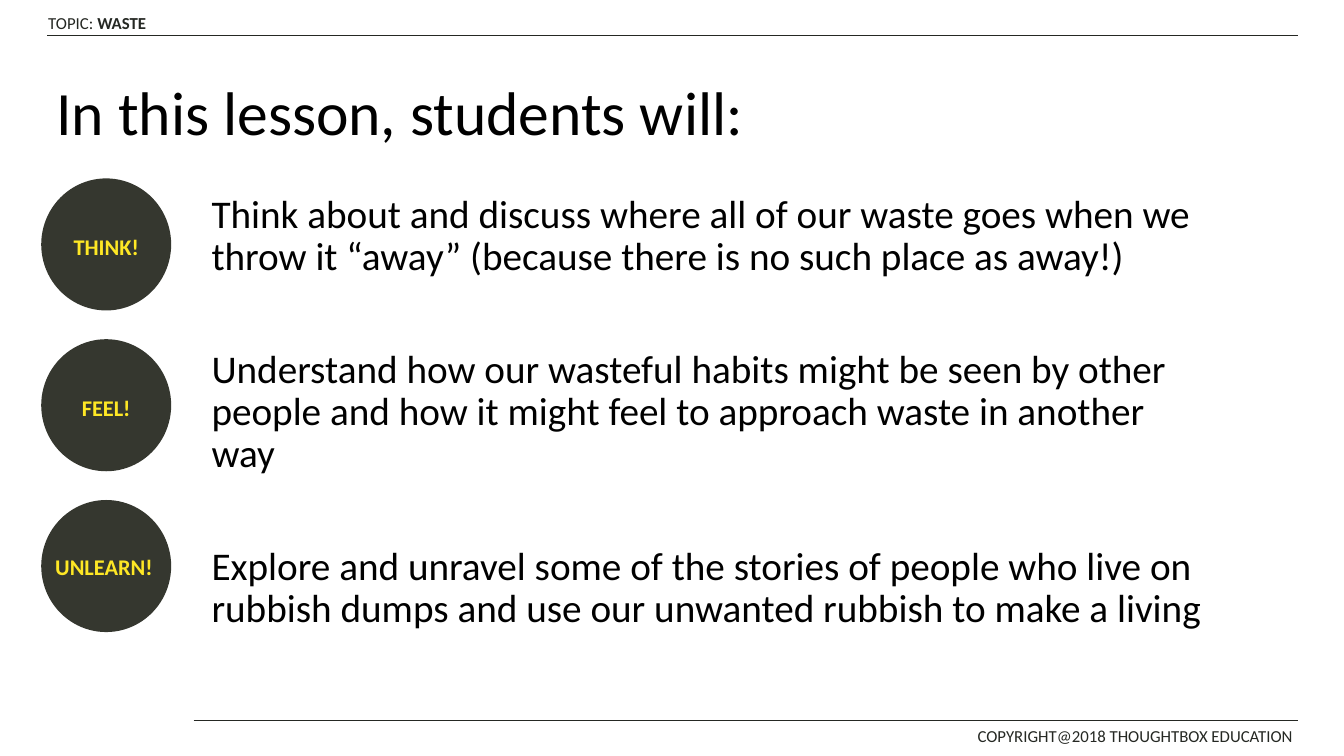
from dataclasses import dataclass, field

import pptx
import pptx.dml.color
import pptx.enum.shapes
import pptx.enum.text
import pptx.oxml.ns
import pptx.util
from lxml import etree

INK, BLACK, DISC, YELLOW = "252823", "000000", "35372F", "FEE725"
ALIGN = pptx.enum.text.PP_ALIGN
ANCHOR = pptx.enum.text.MSO_ANCHOR
FIT = pptx.enum.text.MSO_AUTO_SIZE


@dataclass
class Area:
    """Left, top, width and height as percentages of the slide's size."""
    left: float
    top: float
    width: float
    height: float


@dataclass
class Style:
    size: float
    color: str
    bold: bool = False
    frame: dict = field(default_factory=dict)
    paragraph: dict = field(default_factory=dict)


@dataclass
class TextBlock:
    area: Area
    style: Style
    paragraphs: list[list[tuple[str, bool]]]
    gap: float = 0


deck = pptx.Presentation()
deck.slide_width = pptx.util.Inches(13.33)
deck.slide_height = pptx.util.Inches(7.5)
slide = deck.slides.add_slide(deck.slide_layouts[5])


def across(share: float) -> int:
    return round(deck.slide_width * share / 100)


def down(share: float) -> int:
    return round(deck.slide_height * share / 100)


def place(area: Area) -> tuple[int, int, int, int]:
    return across(area.left), down(area.top), across(area.width), down(area.height)


def rgb(color: str) -> pptx.dml.color.RGBColor:
    return pptx.dml.color.RGBColor.from_string(color)


def apply(target, values: dict) -> None:
    for name, value in values.items():
        setattr(target, name, value)


def write(frame, block: TextBlock) -> None:
    style = block.style
    apply(frame, {"word_wrap": True, "auto_size": FIT.NONE} | style.frame)
    for index, runs in enumerate(block.paragraphs):
        paragraph = frame.add_paragraph() if index else frame.paragraphs[0]
        apply(paragraph, {"alignment": ALIGN.LEFT} | style.paragraph)
        if index:
            paragraph.space_before = pptx.util.Pt(block.gap)
        for words, bold in runs:
            run = paragraph.add_run()
            run.text = words
            apply(run.font, {"name": "Calibri", "size": pptx.util.Pt(style.size),
                             "bold": bold or style.bold})
            run.font.color.rgb = rgb(style.color)


def add_text(block: TextBlock) -> None:
    write(slide.shapes.add_textbox(*place(block.area)).text_frame, block)


def add_rule(left: float, right: float, top: float) -> None:
    rule = slide.shapes.add_connector(pptx.enum.shapes.MSO_CONNECTOR.STRAIGHT,
                                      across(left), down(top), across(right), down(top))
    rule.line.color.rgb = rgb(INK)
    rule.line.width = pptx.util.Pt(1)
    etree.SubElement(rule.element.spPr, pptx.oxml.ns.qn("a:effectLst"))


def add_disc(area: Area, label: str) -> None:
    disc = slide.shapes.add_shape(pptx.enum.shapes.MSO_SHAPE.OVAL, *place(area))
    disc.shadow.inherit = False
    disc.fill.solid()
    disc.fill.fore_color.rgb = rgb(DISC)
    disc.line.fill.background()
    if label:
        write(disc.text_frame, TextBlock(area, DISC_LABEL, [[(label, False)]]))


GROW = {"auto_size": FIT.SHAPE_TO_FIT_TEXT}
TOPIC = Style(12, INK, frame=GROW | {"word_wrap": False})
COPYRIGHT = Style(12, INK, frame=GROW)
TITLE = Style(44, BLACK, frame={"vertical_anchor": ANCHOR.MIDDLE},
              paragraph={"line_spacing": 0.9})
DISC_LABEL = Style(16, YELLOW, True, {"vertical_anchor": ANCHOR.MIDDLE},
                   {"alignment": ALIGN.CENTER, "line_spacing": 1.15,
                    "space_after": pptx.util.Pt(10)})
WIDE_LABEL = Style(16, YELLOW, True, GROW)
AIMS = Style(28, BLACK, paragraph={"line_spacing": 0.9})

# Header and footer
add_text(TextBlock(Area(2.85, 1.07, 9.23, 4), TOPIC,
                   [[("TOPIC: ", False), ("WASTE", True)]]))
add_rule(3.53, 96.6, 4.67)
add_text(TextBlock(Area(72, 95.33, 25.5, 4.13), COPYRIGHT,
                   [[("COPYRIGHT@2018 THOUGHTBOX EDUCATION", False)]]))
add_rule(14.4, 96.6, 95.33)

# Title
title_block = TextBlock(Area(3.45, 6.67, 93.15, 17.33), TITLE,
                        [[("In this lesson, students will:", False)]])
title = slide.shapes.title
apply(title, dict(zip(("left", "top", "width", "height"), place(title_block.area))))
write(title.text_frame, title_block)

# Discs, the last one labelled by a wider text box
for row, label in enumerate(("THINK!", "FEEL!", "")):
    add_disc(Area(3.07, 23.6 + 21.27 * row, 9.67, 17.47), label)
add_text(TextBlock(Area(3.37, 72.53, 9, 4.93), WIDE_LABEL, [[("UNLEARN!", False)]]))

# Lesson aims
aims = (
    "Think about and discuss where all of our waste goes when we throw it “away” "
    "(because there is no such place as away!)",
    "Understand how our wasteful habits might be seen by other people and how it "
    "might feel to approach waste in another way",
    "Explore and unravel some of the stories of people who live on rubbish dumps "
    "and use our unwanted rubbish to make a living",
)
add_text(TextBlock(Area(15, 25.07, 75.53, 65.6), AIMS,
                   [[(aim, False)] for aim in aims], gap=50))

deck.save("out.pptx")
